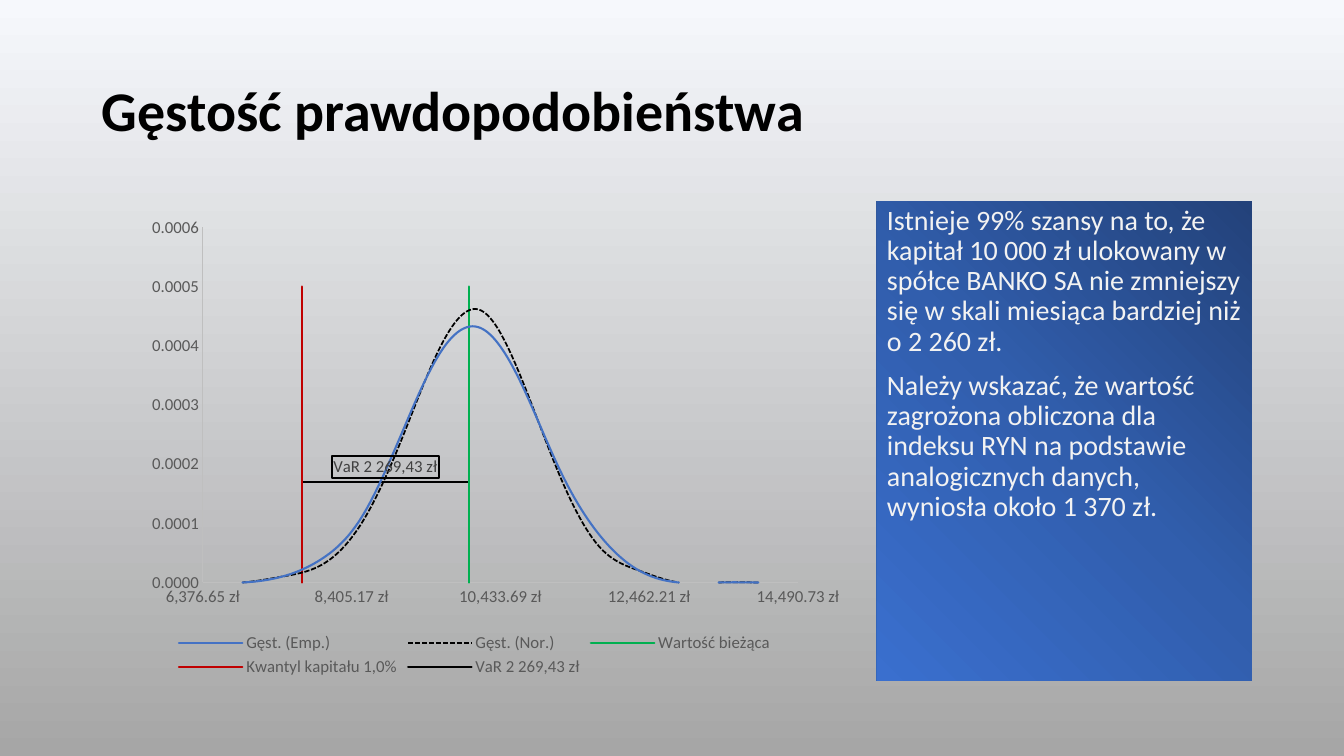
from copy import deepcopy

from lxml.etree import SubElement
from pptx import Presentation
from pptx.chart.data import XyChartData
from pptx.dml.color import RGBColor
from pptx.enum.chart import XL_CHART_TYPE, XL_LEGEND_POSITION, XL_TICK_MARK
from pptx.enum.dml import MSO_LINE
from pptx.enum.shapes import MSO_SHAPE
from pptx.enum.text import MSO_ANCHOR, PP_ALIGN
from pptx.oxml import parse_xml
from pptx.oxml.ns import nsdecls, qn
from pptx.util import Emu, Pt

FONT = "Calibri"
BLACK = RGBColor(0x00, 0x00, 0x00)
OFF_WHITE = RGBColor(0xF2, 0xF2, 0xF2)
GREY_TEXT = RGBColor(0x59, 0x59, 0x59)
GREY_LINE = RGBColor(0xBF, 0xBF, 0xBF)
BLUE = RGBColor(0x44, 0x72, 0xC4)
GREEN = RGBColor(0x00, 0xB0, 0x50)
RED = RGBColor(0xC0, 0x00, 0x00)
BACKDROP = [(0, RGBColor(0xF6, 0xF8, 0xFC)), (1, RGBColor(0xA6, 0xA6, 0xA6))]
PANEL = [(0, RGBColor(0x23, 0x42, 0x7A)), (0.5, RGBColor(0x31, 0x5E, 0xAD)),
         (1, RGBColor(0x3A, 0x6F, 0xCE))]

TITLE = "Gęstość prawdopodobieństwa"
COMMENTS = [
    "Istnieje 99% szansy na to, że kapitał 10 000 zł ulokowany w spółce BANKO SA "
    "nie zmniejszy się w skali miesiąca bardziej niż o 2 260 zł.",
    "Należy wskazać, że wartość zagrożona obliczona dla indeksu RYN na podstawie "
    "analogicznych danych, wyniosła około 1 370 zł.",
]

X_MIN, X_MAX, X_MAJOR = 6376.65, 14490.73, 2028.52
CAPITAL, QUANTILE = 10000, 7730.57
EMPIRICAL = [None, 0, 0, 0.00001, 0.00004, 0.00011, 0.00025, 0.00039, 0.00043,
             0.00034, 0.00019, 0.00008, 0.00002, 0, 0, 0, 0, None]
NORMAL = [None, 0, 0, 0.00001, 0.00003, 0.0001, 0.00024, 0.0004, 0.00046,
          0.00035, 0.00018, 0.00006, 0.00002, 0, 0, 0, 0, None]
GRID = [round(X_MIN + i * (X_MAX - X_MIN) / 15, 2) for i in range(-1, 17)]
MIDDLE = round((CAPITAL + QUANTILE) / 2, 2)
SERIES = [
    ("Gęst. (Emp.)", GRID, EMPIRICAL, BLUE, 1.5, None),
    ("Gęst. (Nor.)", GRID, NORMAL, BLACK, 1.25, MSO_LINE.SQUARE_DOT),
    ("Wartość bieżąca", [CAPITAL] * 2, [0, 0.0005], GREEN, 1.5, None),
    ("Kwantyl kapitału 1,0%", [QUANTILE] * 2, [0, 0.0005], RED, 1.5, None),
    ("VaR 2 269,43 zł", [CAPITAL, MIDDLE, QUANTILE], [0.00017] * 3, BLACK, 1.5, None),
]
FLAGS = ("showLegendKey", "showVal", "showCatName", "showSerName", "showPercent",
         "showBubbleSize")


def px(n):
    """Turn pixels into EMU."""
    return Emu(round(n * 914400 / 100.8))


def apply(obj, values):
    """Set attributes from a dict of format values."""
    for name, value in values.items():
        setattr(obj, name, value)


def style_font(font, size, color, bold=False):
    """Format a font."""
    apply(font, {"name": FONT, "size": Pt(size), "bold": bold})
    font.color.rgb = color


def fill_gradient(fill, element, stops, angle):
    """Fill with a linear gradient of any number of stops."""
    fill.gradient()
    fill.gradient_angle = angle
    gs_list = element.find(".//" + qn("a:gsLst"))
    for _ in stops[2:]:
        gs_list.append(deepcopy(gs_list[-1]))
    for stop, (position, color) in zip(fill.gradient_stops, stops):
        stop.position = position
        stop.color.rgb = color


def write_paragraphs(tf, texts, size, color, bold=False):
    """Write left-aligned paragraphs into a text frame."""
    tf.word_wrap = True
    for i, text in enumerate(texts):
        p = tf.paragraphs[0] if i == 0 else tf.add_paragraph()
        apply(p, {"alignment": PP_ALIGN.LEFT, "line_spacing": 0.9,
                  "space_before": Pt(10 if i else 0)})
        r = p.add_run()
        r.text = text
        style_font(r.font, size, color, bold)


def add_title(s, box):
    """Add the slide heading."""
    tf = s.shapes.add_textbox(*map(px, box)).text_frame
    write_paragraphs(tf, [TITLE], 40, BLACK, True)
    tf.vertical_anchor = MSO_ANCHOR.MIDDLE


def add_comment_panel(s, box):
    """Add the gradient panel with comments."""
    sp = s.shapes.add_shape(MSO_SHAPE.RECTANGLE, *map(px, box))
    sp.shadow.inherit = False
    sp.line.fill.background()
    fill_gradient(sp.fill, sp._element, PANEL, 225)
    write_paragraphs(sp.text_frame, COMMENTS, 20, OFF_WHITE)
    sp.text_frame.vertical_anchor = MSO_ANCHOR.TOP


def set_plot_layout(chart, x, y, w, h):
    """Place the inner plot area and leave chart backgrounds clear."""
    space = chart._chartSpace
    plot_area = space.find(".//" + qn("c:plotArea"))
    for old in plot_area.findall(qn("c:layout")):
        plot_area.remove(old)
    layout = parse_xml(f"<c:layout {nsdecls('c')}><c:manualLayout/></c:layout>")
    values = [("layoutTarget", "inner"), ("xMode", "edge"), ("yMode", "edge"),
              ("x", x), ("y", y), ("w", w), ("h", h)]
    for tag, value in values:
        SubElement(layout[0], qn("c:" + tag)).set("val", str(value))
    plot_area.insert(0, layout)
    clear = parse_xml(f"<c:spPr {nsdecls('c', 'a')}><a:noFill/>"
                      "<a:ln><a:noFill/></a:ln></c:spPr>")
    plot_area.append(clear)
    space.find(qn("c:txPr")).addprevious(deepcopy(clear))


def add_name_label(series, point):
    """Show the series name in a frame above one point."""
    def flags(shown):
        return "".join(f'<c:{f} val="{int(f == shown)}"/>' for f in FLAGS)

    labels = parse_xml(
        f'<c:dLbls {nsdecls("c", "a")}><c:dLbl><c:idx val="{point}"/>'
        '<c:spPr><a:noFill/><a:ln w="19050"><a:solidFill><a:srgbClr val="000000"/>'
        '</a:solidFill></a:ln></c:spPr><c:txPr><a:bodyPr/><a:p><a:pPr><a:defRPr sz="1200">'
        '<a:solidFill><a:srgbClr val="404040"/></a:solidFill>'
        f'<a:latin typeface="{FONT}"/></a:defRPr></a:pPr></a:p></c:txPr>'
        f'<c:dLblPos val="t"/>{flags("showSerName")}</c:dLbl>{flags(None)}</c:dLbls>')
    series._element.find(qn("c:xVal")).addprevious(labels)


def format_axis(axis, number_format, limits):
    """Format an axis, its scale and its labels."""
    apply(axis, {"has_major_gridlines": False, "has_minor_gridlines": False,
                 "has_title": False, "major_tick_mark": XL_TICK_MARK.NONE,
                 "minor_tick_mark": XL_TICK_MARK.NONE})
    apply(axis, dict(zip(("minimum_scale", "maximum_scale", "major_unit"), limits)))
    apply(axis.tick_labels, {"number_format": number_format,
                             "number_format_is_linked": False})
    style_font(axis.tick_labels.font, 12, GREY_TEXT)
    axis.format.line.color.rgb = GREY_LINE
    axis.format.line.width = Pt(0.75)


def format_series(series, color, width, dash):
    """Smooth a series, format its line and drop its empty points."""
    line = series.format.line
    line.color.rgb = color
    apply(line, {"width": Pt(width), "dash_style": dash})
    ser = series._element
    if dash is None:
        ser.find(qn("c:spPr")).find(qn("a:ln")).set("cap", "rnd")
    ser.find(qn("c:smooth")).set("val", "1")
    for pt in list(ser.iter(qn("c:pt"))):
        if pt.findtext(qn("c:v")) in ("None", ""):
            pt.getparent().remove(pt)


def add_density_chart(s, box):
    """Add the density curves with the value-at-risk span."""
    data = XyChartData()
    for name, xs, ys, *_ in SERIES:
        series = data.add_series(name)
        for x, y in zip(xs, ys):
            series.add_data_point(x, y)
    chart = s.shapes.add_chart(XL_CHART_TYPE.XY_SCATTER_SMOOTH_NO_MARKERS,
                               *map(px, box), data).chart
    apply(chart, {"has_title": False, "has_legend": True})
    style_font(chart.font, 12, BLACK)
    apply(chart.legend, {"position": XL_LEGEND_POSITION.BOTTOM,
                         "include_in_layout": False})
    style_font(chart.legend.font, 12, GREY_TEXT)
    format_axis(chart.category_axis, '#,##0.00\\ "zł"', (X_MIN, X_MAX, X_MAJOR))
    format_axis(chart.value_axis, "0.0000", (0, 0.0006, 0.0001))
    plot = chart.plots[0]
    plot.vary_by_categories = False
    for series, (*_, color, width, dash) in zip(plot.series, SERIES):
        format_series(series, color, width, dash)
    add_name_label(plot.series[-1], 1)
    set_plot_layout(chart, 0.145, 0.055, 0.778, 0.74)


def main():
    """Build the slide and save it."""
    prs = Presentation()
    apply(prs, {"slide_width": px(1344), "slide_height": px(756)})
    s = prs.slides.add_slide(prs.slide_layouts[6])
    fill_gradient(s.background.fill, s._element, BACKDROP, 270)
    add_title(s, (92, 40, 765, 146))
    add_comment_panel(s, (877, 201, 375, 480))
    add_density_chart(s, (92, 201, 765, 480))
    prs.save("out.pptx")


if __name__ == "__main__":
    main()
